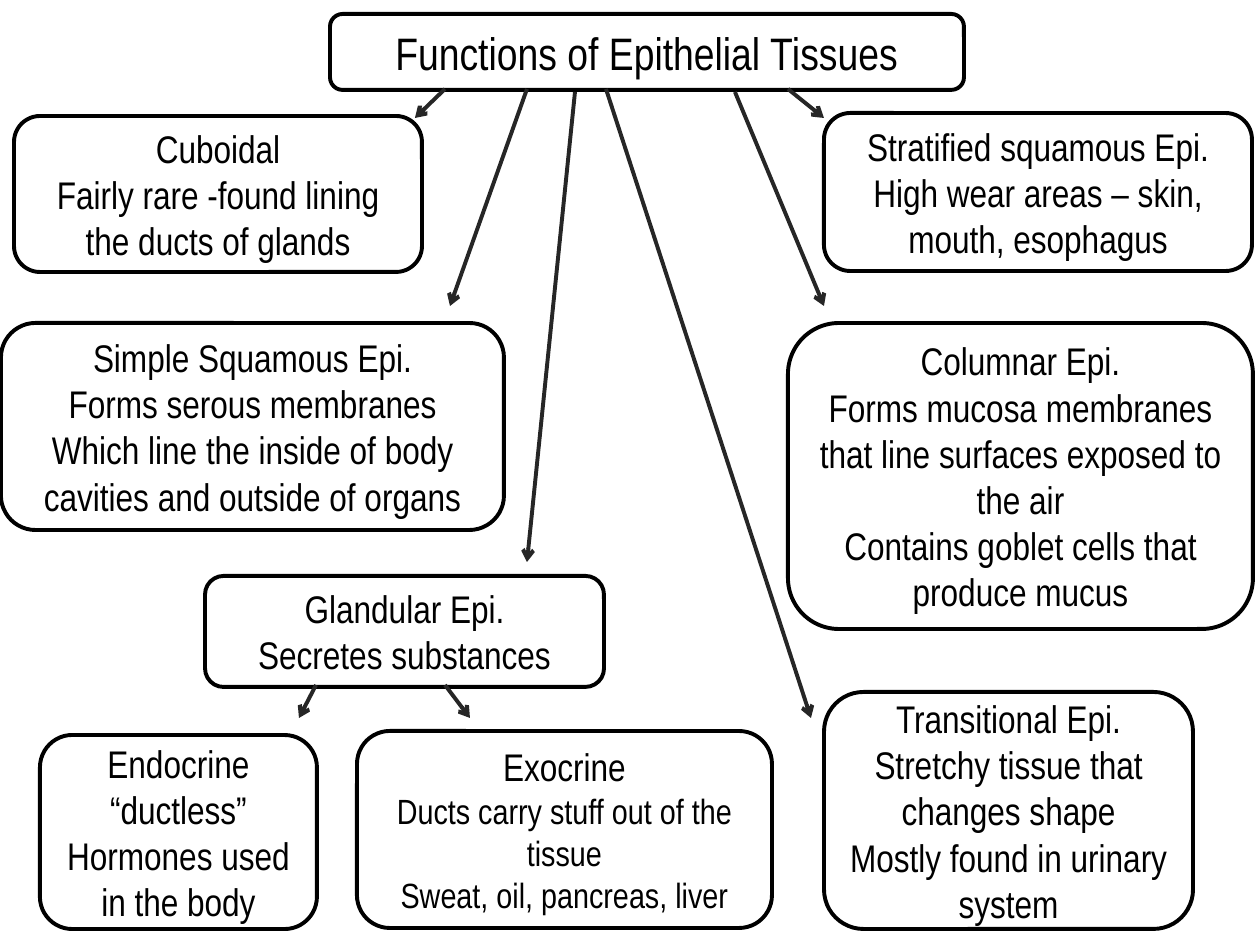
"""Builds a concept map of the functions of epithelial tissues."""
from dataclasses import dataclass

from lxml.etree import SubElement
from pptx import Presentation
from pptx.dml.color import RGBColor
from pptx.enum.shapes import MSO_CONNECTOR, MSO_SHAPE
from pptx.enum.text import MSO_ANCHOR, MSO_AUTO_SIZE, PP_ALIGN
from pptx.oxml.ns import qn
from pptx.util import Emu, Pt


@dataclass(frozen=True)
class Theme:
    font: str = "Arial Narrow"
    ink: RGBColor = RGBColor(0, 0, 0)
    paper: RGBColor = RGBColor(255, 255, 255)
    arrow: RGBColor = RGBColor(0x26, 0x26, 0x26)
    stroke: Pt = Pt(2.25)
    title: Pt = Pt(26)
    body: Pt = Pt(22)
    small: Pt = Pt(20)


theme = Theme()
PX = 914400 / 126


def add_box(s, rect):
    sp = s.shapes.add_shape(MSO_SHAPE.ROUNDED_RECTANGLE, *(Emu(round(v * PX)) for v in rect))
    sp.shadow.inherit = False
    sp.fill.solid()
    sp.fill.fore_color.rgb = theme.paper
    sp.line.color.rgb = theme.ink
    sp.line.width = theme.stroke
    return sp


def set_text(sp, lines, sizes):
    tf = sp.text_frame
    tf.text = "\n".join(lines)
    tf.word_wrap = True
    tf.auto_size = MSO_AUTO_SIZE.NONE
    tf.vertical_anchor = MSO_ANCHOR.MIDDLE
    for p, size in zip(tf.paragraphs, sizes):
        p.alignment = PP_ALIGN.CENTER
        for r in p.runs:
            r.font.name = theme.font
            r.font.size = size
            r.font.color.rgb = theme.ink


prs = Presentation()
prs.slide_width, prs.slide_height = Emu(round(1260 * PX)), Emu(round(945 * PX))
s = prs.slides.add_slide(prs.slide_layouts[5])

frame = add_box(s, (330, 14, 634, 76))
title = s.shapes.title
title.left, title.top, title.width, title.height = frame.left, frame.top, frame.width, frame.height
set_text(title, ["Functions of Epithelial Tissues"], [theme.title])
s.shapes._spTree.append(title._element)

tissues = [
    ((788, 323, 465, 306), theme.body,
     ["Columnar Epi.", "Forms mucosa membranes that line surfaces exposed to the air",
      "Contains goblet cells that produce mucus"]),
    ((824, 113, 428, 158), theme.body,
     ["Stratified squamous Epi.", "High wear areas – skin, mouth, esophagus"]),
    ((1, 323, 503, 207), theme.body,
     ["Simple Squamous Epi.", "Forms serous membranes",
      "Which line the inside of body cavities and outside of organs"]),
    ((14, 116, 408, 156), theme.body,
     ["Cuboidal", "Fairly rare -found lining the ducts of glands"]),
    ((824, 692, 369, 237), theme.body,
     ["Transitional Epi.", "Stretchy tissue that changes shape",
      "Mostly found in urinary system"]),
    ((205, 576, 399, 111), theme.body,
     ["Glandular Epi.", "Secretes substances"]),
    ((357, 731, 415, 197), theme.small,
     ["Exocrine", "Ducts carry stuff out of the tissue", "Sweat, oil, pancreas, liver"]),
    ((40, 735, 277, 194), theme.body,
     ["Endocrine", "“ductless”", "Hormones used in the body"]),
]
for rect, detail_size, lines in tissues:
    set_text(add_box(s, rect), lines, [theme.body] + [detail_size] * (len(lines) - 1))

arrows = [
    (445, 89, 415, 118),
    (527, 89, 450, 306),
    (575, 92, 527, 562),
    (788, 89, 824, 118),
    (735, 92, 824, 306),
    (606, 89, 811, 718),
    (316, 685, 299, 718),
    (445, 685, 470, 718),
]
for ends in arrows:
    cxn = s.shapes.add_connector(MSO_CONNECTOR.STRAIGHT, *(Emu(round(v * PX)) for v in ends))
    cxn.line.color.rgb = theme.arrow
    cxn.line.width = theme.stroke
    SubElement(cxn.line._get_or_add_ln(), qn("a:tailEnd"), type="arrow")
    SubElement(cxn._element.spPr, qn("a:effectLst"))

prs.save("out.pptx")
